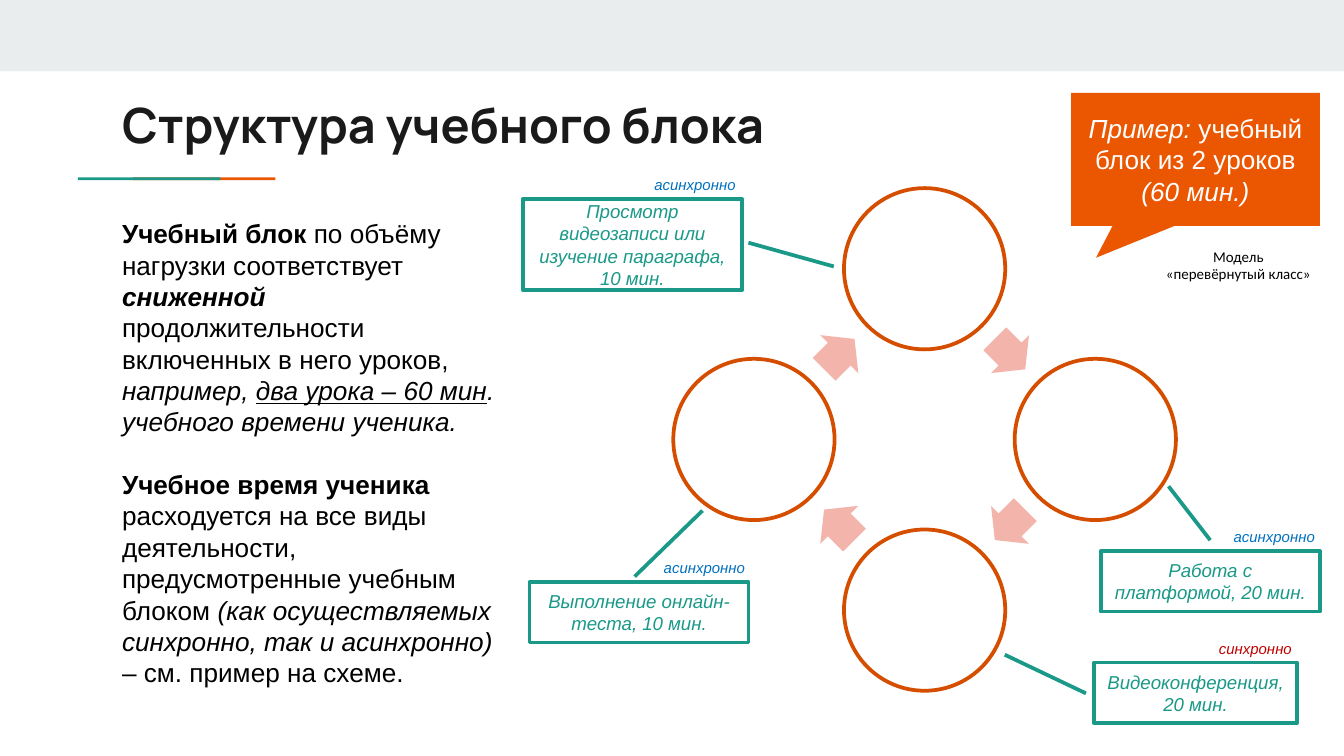
import math

from pptx import Presentation
from pptx import util as u
from pptx.dml.color import RGBColor
from pptx.enum import shapes, text

SHAPE = shapes.MSO_SHAPE
CENTER = text.PP_ALIGN.CENTER
MIDDLE = text.MSO_ANCHOR.MIDDLE
TEAL, ORANGE, RIM, PINK = "1A9988", "EB5600", "D54E00", "F3B4AB"
WHITE, BLACK, BLUE, RED = "FFFFFF", "000000", "0070C0", "C00000"


def color(value):
    return RGBColor.from_string(value)


def write(shape, paragraphs, size, ink=BLACK, font="Arial", align=None,
          anchor=text.MSO_ANCHOR.TOP, wrap=True, gap=0):
    """Fill a shape with paragraphs of (text, style) runs; style letters: b, i, u."""
    frame = shape.text_frame
    frame.word_wrap = wrap
    frame.vertical_anchor = anchor
    for index, runs in enumerate(paragraphs):
        paragraph = frame.add_paragraph() if index else frame.paragraphs[0]
        paragraph.alignment = align
        if index:
            paragraph.space_before = u.Pt(gap)
        for words, style in runs:
            run = paragraph.add_run()
            run.text = words
            run.font.size = u.Pt(size)
            run.font.name = font
            run.font.color.rgb = color(ink)
            run.font.bold = "b" in style
            run.font.italic = "i" in style
            run.font.underline = "u" in style


def add_text(slide, box, paragraphs, size, **form):
    label = slide.shapes.add_textbox(*map(u.Inches, box))
    write(label, paragraphs, size, **form)


def add_figure(slide, kind, box, fill, line=None, adjust=(), rotation=0):
    figure = slide.shapes.add_shape(kind, *map(u.Inches, box))
    figure.shadow.inherit = False
    figure.fill.solid()
    figure.fill.fore_color.rgb = color(fill)
    if line:
        figure.line.color.rgb = color(line)
        figure.line.width = u.Pt(2)
    else:
        figure.line.fill.background()
    for index, value in enumerate(adjust):
        figure.adjustments[index] = value
    figure.rotation = rotation
    return figure


def add_header(slide, left, top, width, height):
    add_figure(slide, SHAPE.RECTANGLE, (0, 0, 10, 0.53), "E9EDEE")
    for offset, fill in ((0.18, ORANGE), (-0.23, TEAL)):
        add_figure(slide, SHAPE.RECTANGLE,
                   (left + offset, top + 0.69, 1.06, 0.02), fill)
    add_text(slide, (left, top, width, height),
             [[("Структура учебного блока", "b")]], 26,
             ink="1A1A1A", font="Manrope", anchor=MIDDLE)


def add_cycle(slide, center_x, center_y, radius, diameter):
    """Place four circles clockwise from the top, with an arrow after each."""
    arrow_width, arrow_height = 0.32, 0.4
    for step in range(4):
        angle = math.radians(90 * step)
        x = center_x + radius * math.sin(angle)
        y = center_y - radius * math.cos(angle)
        add_figure(slide, SHAPE.OVAL,
                   (x - diameter / 2, y - diameter / 2, diameter, diameter),
                   WHITE, RIM)
        halfway = angle + math.pi / 4
        reach = radius / math.sqrt(2)
        x = center_x + reach * math.sin(halfway)
        y = center_y - reach * math.cos(halfway)
        add_figure(slide, SHAPE.RIGHT_ARROW,
                   (x - arrow_width / 2, y - arrow_height / 2,
                    arrow_width, arrow_height),
                   PINK, adjust=(0.6, 0.5), rotation=45 + 90 * step)


def add_activity(slide, box, words, pointer, mode, mode_offset):
    """Add a callout with its learning mode above the right part."""
    callout = add_figure(slide, SHAPE.LINE_CALLOUT_1, box, WHITE, TEAL, pointer)
    write(callout, [[(words, "i")]], 10, ink=TEAL, align=CENTER, anchor=MIDDLE)
    ink, width = (RED, 0.75) if mode == "синхронно" else (BLUE, 0.81)
    add_text(slide, (box[0] + mode_offset, box[1] - 0.22, width, 0.24),
             [[(mode, "i")]], 8, ink=ink, wrap=False)


def add_explanation(slide, box):
    add_text(slide, box, [
        [("Учебный блок", "b"), (" по объёму нагрузки соответствует ", ""),
         ("сниженной ", "bi"),
         ("продолжительности включенных в него уроков, ", ""),
         ("например, ", "i"), ("два урока – 60 мин", "iu"),
         (". учебного времени ученика.", "i")],
        [("Учебное время ученика ", "b"),
         ("расходуется на все виды деятельности, "
          "предусмотренные учебным блоком ", ""),
         ("(как осуществляемых синхронно, так и асинхронно) ", "i"),
         ("– см. пример на схеме.", "")],
    ], 14, gap=16.7)


def add_example(slide, left, top, width, height):
    bubble = add_figure(slide, SHAPE.RECTANGULAR_CALLOUT,
                        (left, top, width, height), ORANGE,
                        adjust=(-0.4, 0.74))
    write(bubble, [[("Пример: ", "i"), ("учебный блок из 2 уроков ", ""),
                    ("(60 мин.)", "i")]],
          14, ink=WHITE, align=CENTER, anchor=MIDDLE)
    add_text(slide, (left + 0.58, top + 1.1, 1.33, 0.37),
             [[("Модель «перевёрнутый класс»", "")]], 8,
             font="Calibri", align=CENTER)


ACTIVITIES = [
    ((8.14, 4.93, 1.51, 0.45), "Видеоконференция, 20 мин.",
     (0.51, -0.04, -0.13, -0.44), "синхронно", 0.83),
    ((3.89, 1.48, 1.63, 0.68),
     "Просмотр видеозаписи или изучение параграфа, 10 мин.",
     (0.48, 1.03, 0.74, 1.42), "асинхронно", 0.88),
    ((3.94, 4.33, 1.63, 0.45), "Выполнение онлайн-теста, 10 мин.",
     (-0.09, 0.48, -1.18, 0.79), "асинхронно", 0.9),
    ((8.19, 4.1, 1.63, 0.45), "Работа с платформой, 20 мин.",
     (-0.18, 0.5, -1.07, 0.31), "асинхронно", 0.89),
]


def main():
    deck = Presentation()
    deck.slide_width = u.Inches(10)
    deck.slide_height = deck.slide_width * 9 // 16
    slide = deck.slides.add_slide(deck.slide_layouts[6])
    add_header(slide, 0.81, 0.63, 8.41, 0.59)
    add_cycle(slide, 6.88, 3.27, 1.27, 1.2)
    add_explanation(slide, (0.81, 1.57, 3, 3.64))
    add_example(slide, 7.97, 0.69, 1.85, 0.99)
    for activity in ACTIVITIES:
        add_activity(slide, *activity)
    deck.save("out.pptx")


if __name__ == "__main__":
    main()
